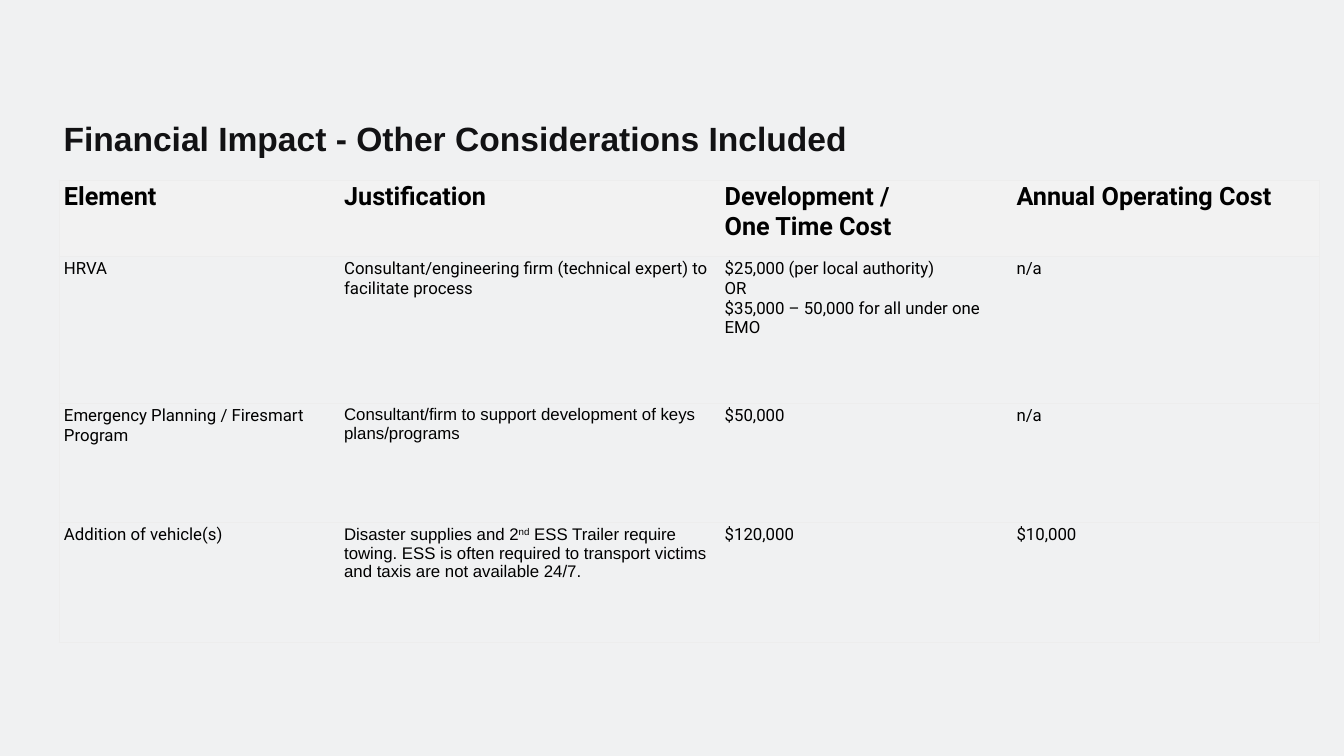
import pptx
import pptx.util
import pptx.dml.color
import pptx.enum.text
import lxml.etree

Cm, Pt = pptx.util.Cm, pptx.util.Pt
TITLE = "Financial Impact - Other Considerations Included"
HEAD = ["Element", "Justification", "Development /\nOne Time Cost", "Annual Operating Cost"]
ROWS = [
    ["HRVA",
     "Consultant/engineering firm (technical expert) to facilitate process",
     "$25,000 (per local authority)\nOR\n$35,000 – 50,000 for all under one EMO",
     "n/a"],
    ["Emergency Planning / Firesmart Program",
     "Consultant/firm to support development of keys plans/programs",
     "$50,000", "n/a"],
    ["Addition of vehicle(s)",
     "Disaster supplies and 2^nd^ ESS Trailer require towing. ESS is often required "
     "to transport victims and taxis are not available 24/7.",
     "$120,000", "$10,000"],
]
WIDTHS = [14.12, 19.18, 14.71, 15.52]
HEIGHTS = [3.86, 7.39, 6.02, 6.02]
ARIAL = {(2, 1), (3, 1)}
NS = "http://schemas.openxmlformats.org/drawingml/2006/main"
PLAIN = "{2D5ABB26-0587-4C30-8999-92F81FD0307C}"


def paint(fill, code):
    fill.solid()
    fill.fore_color.rgb = pptx.dml.color.RGBColor.from_string(code)


def style(par, name, size, code, bold):
    font = par.font
    font.name, font.size, font.bold = name, Pt(size), bold
    paint(font.fill, code)
    par.alignment = pptx.enum.text.PP_ALIGN.LEFT


def edge(cell, sides, code):
    props = cell._tc.get_or_add_tcPr()
    for side in sides:
        line = lxml.etree.SubElement(props, f"{{{NS}}}ln{side}", w=str(Pt(0.75)))
        fill = lxml.etree.SubElement(line, f"{{{NS}}}solidFill")
        lxml.etree.SubElement(fill, f"{{{NS}}}srgbClr", val=code)


def write(cell, text, name, size, bold):
    frame = cell.text_frame
    for i, line in enumerate(text.split("\n")):
        par = frame.add_paragraph() if i else frame.paragraphs[0]
        for j, part in enumerate(line.split("^")):
            run = par.add_run()
            run.text = part
            if j % 2:
                run._r.get_or_add_rPr().set("baseline", "30000")
        style(par, name, size, "000000", bold)


def main():
    deck = pptx.Presentation()
    deck.slide_width, deck.slide_height = Cm(67.74), Cm(38.1)
    slide = deck.slides.add_slide(deck.slide_layouts[5])
    paint(slide.background.fill, "F0F1F2")

    title = slide.shapes.title
    title.left, title.top, title.width, title.height = Cm(2.95), Cm(5.82), Cm(43.13), Cm(3.25)
    title.text = TITLE
    frame = title.text_frame
    frame.word_wrap = True
    frame.auto_size = pptx.enum.text.MSO_AUTO_SIZE.NONE
    frame.vertical_anchor = pptx.enum.text.MSO_ANCHOR.TOP
    style(frame.paragraphs[0], "Arial", 48, "121214", True)

    data = [HEAD] + ROWS
    shape = slide.shapes.add_table(len(data), len(HEAD), Cm(2.97), Cm(9.07),
                                   Cm(sum(WIDTHS)), Cm(sum(HEIGHTS)))
    table = shape.table
    table._tbl.tblPr.find(f"{{{NS}}}tableStyleId").text = PLAIN
    table.first_row = table.horz_banding = False
    for col, width in zip(table.columns, WIDTHS):
        col.width = Cm(width)
    for row, height in zip(table.rows, HEIGHTS):
        row.height = Cm(height)
    last = len(HEAD) - 1
    for r, texts in enumerate(data):
        for c, text in enumerate(texts):
            cell = table.cell(r, c)
            write(cell, text, "Arial" if (r, c) in ARIAL else "Roboto",
                  24 if r else 36, r == 0)
            edge(cell, "L" * (c == 0) + "R" * (c == last) + "TB", "EDEDED")
            if r:
                cell.fill.background()
            else:
                paint(cell.fill, "F2F2F2")

    deck.save("out.pptx")


if __name__ == "__main__":
    main()
